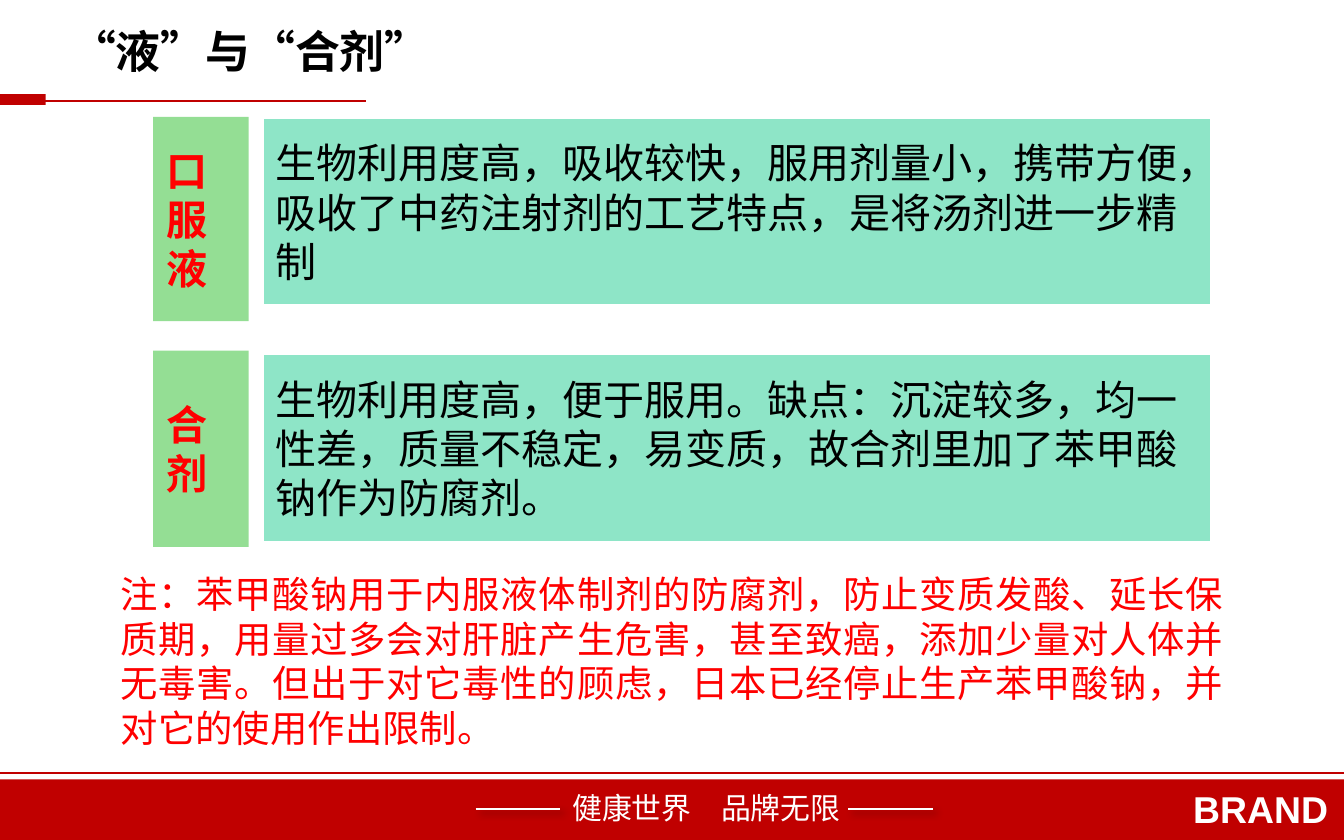
import dataclasses

import lxml.etree
import pptx
import pptx.dml.color
import pptx.enum.lang
import pptx.enum.shapes
import pptx.enum.text
import pptx.oxml.ns
import pptx.util

Inches = pptx.util.Inches
ALIGN = pptx.enum.text.PP_ALIGN
ANCHOR = pptx.enum.text.MSO_ANCHOR
AUTO_SIZE = pptx.enum.text.MSO_AUTO_SIZE


@dataclasses.dataclass(frozen=True)
class Theme:
    brand: str = "C00000"
    white: str = "FFFFFF"
    ink: str = "000000"
    alert: str = "FF0000"
    label_fill: str = "94DE94"
    panel_fill: str = "8EE5C7"
    chinese_font: str = "Noto Sans CJK SC"
    latin_font: str = "Arial"
    title_size: int = 24
    body_size: int = 22
    note_size: int = 20
    slogan_size: int = 16


def rgb(color):
    return pptx.dml.color.RGBColor.from_string(color)


def write_text(frame, text, *, size, color, font, bold=False, align=ALIGN.LEFT,
               anchor=ANCHOR.TOP, wrap=True, bottom=0.05):
    frame.word_wrap = wrap
    frame.auto_size = AUTO_SIZE.NONE
    frame.vertical_anchor = anchor
    frame.margin_left = frame.margin_right = Inches(0.1)
    frame.margin_top, frame.margin_bottom = Inches(0.05), Inches(bottom)
    paragraph = frame.paragraphs[0]
    paragraph.alignment = align
    run = paragraph.add_run()
    run.text = text
    run.font.size = pptx.util.Pt(size)
    run.font.bold = bold
    run.font.color.rgb = rgb(color)
    run.font.name = font
    run.font.language_id = pptx.enum.lang.MSO_LANGUAGE_ID.SIMPLIFIED_CHINESE
    east_asian = lxml.etree.SubElement(run.font._element, pptx.oxml.ns.qn("a:ea"))
    east_asian.set("typeface", font)


class SlideBuilder:
    def __init__(self, slide, theme):
        self.slide = slide
        self.theme = theme

    def box(self, left, top, width, height, fill, outline=None):
        shape = self.slide.shapes.add_shape(
            pptx.enum.shapes.MSO_SHAPE.RECTANGLE,
            Inches(left), Inches(top), Inches(width), Inches(height))
        shape.shadow.inherit = False
        shape.fill.solid()
        shape.fill.fore_color.rgb = rgb(fill)
        if outline:
            shape.line.color.rgb = rgb(outline)
            shape.line.width = pptx.util.Pt(2)
        else:
            shape.line.fill.background()
        return shape

    def text(self, left, top, width, height, text, **text_format):
        shape = self.slide.shapes.add_textbox(
            Inches(left), Inches(top), Inches(width), Inches(height))
        write_text(shape.text_frame, text, wrap=False, **text_format)

    def rule(self, start, end, y, color, weight=1.0, shadow=False):
        """Draw a horizontal line, optionally with a soft diagonal shadow."""
        connector = self.slide.shapes.add_connector(
            pptx.enum.shapes.MSO_CONNECTOR.STRAIGHT,
            Inches(start), Inches(y), Inches(end), Inches(y))
        connector.line.color.rgb = rgb(color)
        connector.line.width = pptx.util.Pt(weight)
        qn = pptx.oxml.ns.qn
        effects = lxml.etree.SubElement(connector._element.spPr, qn("a:effectLst"))
        if shadow:
            outer = lxml.etree.SubElement(
                effects, qn("a:outerShdw"), blurRad=str(pptx.util.Pt(4)),
                dist=str(pptx.util.Pt(3)), dir="2700000", algn="tl")
            tint = lxml.etree.SubElement(outer, qn("a:srgbClr"), val=self.theme.ink)
            lxml.etree.SubElement(tint, qn("a:alpha"), val="40000")

    def footer(self, slogan, brand):
        theme = self.theme
        self.rule(0, 10, 5.75, theme.brand)
        self.box(0, 5.8, 10, 0.46, theme.brand)
        self.text(4.16, 5.83, 2.31, 0.37, slogan, size=theme.slogan_size,
                  color=theme.white, font=theme.chinese_font)
        for start in (3.54, 6.31):
            self.rule(start, start + 0.63, 6.02, theme.white, shadow=True)
        self.text(8.78, 5.8, 0.87, 0.44, brand, size=theme.note_size,
                  color=theme.white, font=theme.latin_font, bold=True)

    def title(self, text):
        theme = self.theme
        self.rule(0.33, 2.72, 0.75, theme.brand, weight=0.79)
        self.box(0, 0.7, 0.34, 0.08, theme.brand)
        self.text(0.43, 0.13, 2.89, 0.5, text, size=theme.title_size,
                  color=theme.ink, font=theme.chinese_font, bold=True)

    def comparison(self, label, description, label_top, label_height, panel_top):
        theme = self.theme
        shared = dict(size=theme.body_size, font=theme.chinese_font, anchor=ANCHOR.MIDDLE)
        label_box = self.box(1.14, label_top, 0.71, label_height, theme.label_fill)
        write_text(label_box.text_frame, label, color=theme.alert, bold=True, **shared)
        panel = self.box(1.95, panel_top, 7.07, 1.41, theme.panel_fill, theme.white)
        write_text(panel.text_frame, description, color=theme.ink, **shared)

    def note(self, text):
        theme = self.theme
        shape = self.box(0.8, 4.19, 8.4, 1.4, theme.white)
        write_text(shape.text_frame, text, size=theme.note_size, color=theme.alert,
                   font=theme.chinese_font, align=ALIGN.JUSTIFY,
                   anchor=ANCHOR.MIDDLE, bottom=0)


def main():
    presentation = pptx.Presentation()
    presentation.slide_width, presentation.slide_height = Inches(10), Inches(6.25)
    slide = presentation.slides.add_slide(presentation.slide_layouts[6])
    builder = SlideBuilder(slide, Theme())

    builder.footer("健康世界　品牌无限", "BRAND")
    builder.title("“液”与“合剂”")
    builder.comparison(
        "口服液",
        "生物利用度高，吸收较快，服用剂量小，携带方便，吸收了中药注射剂的工艺特点，"
        "是将汤剂进一步精制",
        label_top=0.87, label_height=1.52, panel_top=0.87)
    builder.comparison(
        "合剂",
        "生物利用度高，便于服用。缺点：沉淀较多，均一性差，质量不稳定，易变质，"
        "故合剂里加了苯甲酸钠作为防腐剂。",
        label_top=2.61, label_height=1.46, panel_top=2.63)
    builder.note(
        "注：苯甲酸钠用于内服液体制剂的防腐剂，防止变质发酸、延长保质期，用量过多会对肝脏"
        "产生危害，甚至致癌，添加少量对人体并无毒害。但出于对它毒性的顾虑，日本已经停止生产"
        "苯甲酸钠，并对它的使用作出限制。")

    presentation.save("out.pptx")


if __name__ == "__main__":
    main()
